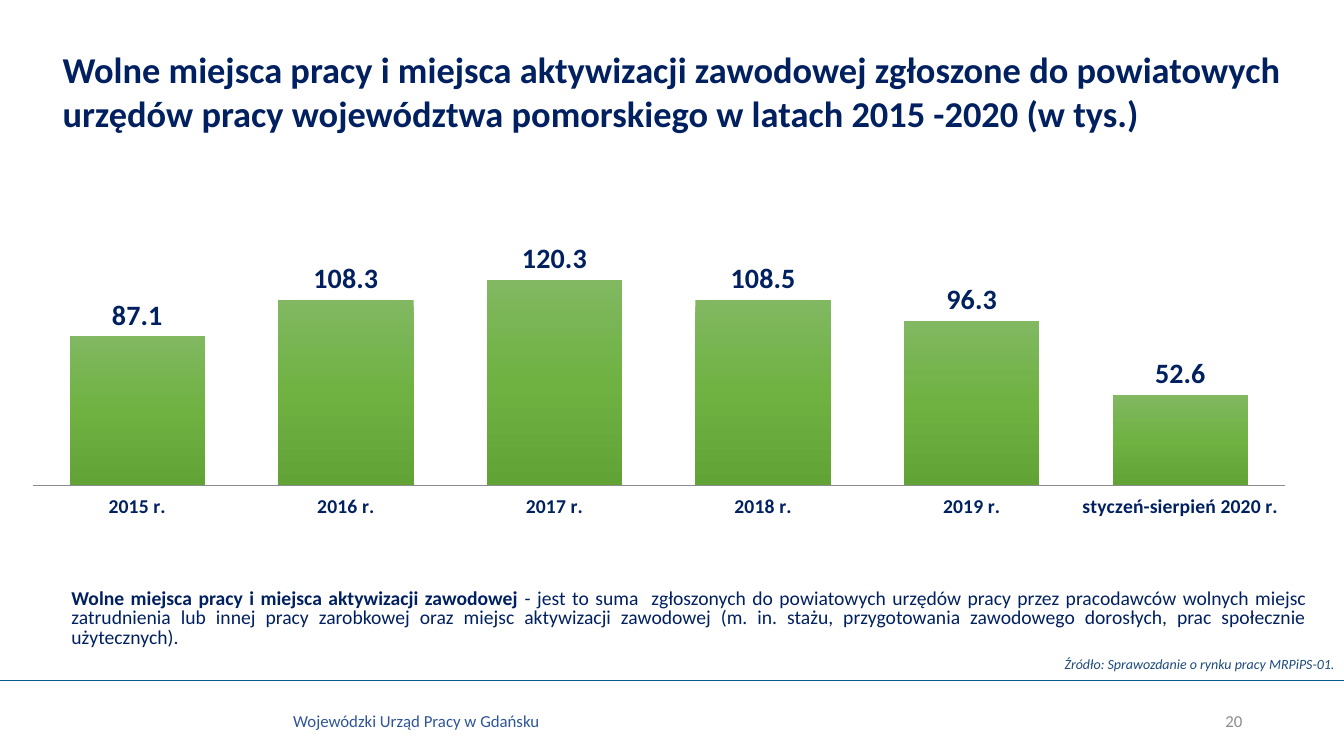
from lxml import etree
from pptx import Presentation
from pptx.chart.data import CategoryChartData
from pptx.dml.color import RGBColor
from pptx.enum.chart import XL_CHART_TYPE, XL_LABEL_POSITION, XL_TICK_LABEL_POSITION, XL_TICK_MARK
from pptx.enum.shapes import MSO_CONNECTOR
from pptx.enum.text import MSO_ANCHOR, MSO_AUTO_SIZE, PP_ALIGN
from pptx.oxml import parse_xml
from pptx.oxml.ns import nsdecls, qn
from pptx.util import Inches, Pt

NAVY, GREY = "002060", "8C8C8C"
BAR_GRADIENT = [(0, "81B861"), (50, "6FB242"), (100, "62A336")]
JOB_OFFERS = {
    "2015 r.": 87.1,
    "2016 r.": 108.3,
    "2017 r.": 120.3,
    "2018 r.": 108.5,
    "2019 r.": 96.3,
    "styczeń-sierpień 2020 r.": 52.6,
}


def rgb(value):
    return RGBColor.from_string(value)


class SlideBuilder:
    font_name = "Calibri"

    def __init__(self, slide):
        self.slide = slide

    def style(self, font, size, color, bold=False, italic=False):
        font.name = self.font_name
        font.size = Pt(size)
        font.color.rgb = rgb(color)
        font.bold = bold
        font.italic = italic

    def place(self, shape, left, top, width, height):
        shape.left, shape.top = Inches(left), Inches(top)
        shape.width, shape.height = Inches(width), Inches(height)

    def title(self, text, area, size, color):
        box = self.slide.shapes.title
        self.place(box, *area)
        frame = box.text_frame
        frame.text = text
        frame.word_wrap = True
        frame.auto_size = MSO_AUTO_SIZE.NONE
        frame.vertical_anchor = MSO_ANCHOR.TOP
        para = frame.paragraphs[0]
        para.alignment = PP_ALIGN.LEFT
        self.style(para.runs[0].font, size, color, bold=True)

    def text(self, spans, area, size, color, align=PP_ALIGN.LEFT, anchor=MSO_ANCHOR.TOP,
             italic=False, line_spacing=None, margin_right=0.1):
        """Add a text box from (text, bold) spans."""
        box = self.slide.shapes.add_textbox(*map(Inches, area))
        frame = box.text_frame
        frame.word_wrap = True
        frame.vertical_anchor = anchor
        frame.margin_right = Inches(margin_right)
        para = frame.paragraphs[0]
        para.alignment = align
        if line_spacing:
            para.line_spacing = Pt(line_spacing)
        for words, bold in spans:
            span = para.add_run()
            span.text = words
            self.style(span.font, size, color, bold, italic)

    def line(self, start, end, color, width):
        connector = self.slide.shapes.add_connector(
            MSO_CONNECTOR.STRAIGHT, *map(Inches, start + end))
        connector.line.color.rgb = rgb(color)
        connector.line.width = Pt(width)
        etree.SubElement(connector.element.spPr, qn("a:effectLst"))

    def column_chart(self, values, area, plot_area):
        data = CategoryChartData(number_format="0.0")
        data.categories = list(values)
        data.add_series("Wolne miejsca pracy", list(values.values()))
        chart = self.slide.shapes.add_chart(
            XL_CHART_TYPE.COLUMN_CLUSTERED, *map(Inches, area), data).chart
        chart.has_legend = False
        chart.has_title = False
        self.style(chart.font, 14, NAVY, bold=True)

        years = chart.category_axis
        years.major_tick_mark = XL_TICK_MARK.NONE
        years.tick_label_position = XL_TICK_LABEL_POSITION.LOW
        years.tick_labels.offset = 0
        years.format.line.color.rgb = rgb(GREY)
        years.format.line.width = Pt(0.5)
        self.style(years.tick_labels.font, 14, NAVY, bold=True)
        scale = chart.value_axis
        scale.minimum_scale, scale.maximum_scale, scale.major_unit = 0, 160, 40
        scale.has_major_gridlines = False
        scale.visible = False

        plot = chart.plots[0]
        plot.gap_width, plot.overlap = 54, -27
        plot.vary_by_categories = False
        plot.has_data_labels = True
        labels = plot.data_labels
        labels.show_value = True
        labels.number_format, labels.number_format_is_linked = "0.0", False
        labels.position = XL_LABEL_POSITION.OUTSIDE_END
        self.style(labels.font, 20, NAVY, bold=True)
        self.gradient(plot.series[0].format, BAR_GRADIENT)
        self.plot_layout(chart, plot_area)

    def gradient(self, bar_format, stops):
        """Fill bars from top to bottom through (percent, colour) stops."""
        bar_format.fill.gradient()
        bar_format.fill.gradient_angle = 270
        stop_list = bar_format.fill.gradient_stops
        parent = stop_list[0]._gs.getparent()
        for stop in list(parent):
            parent.remove(stop)
        for percent, color in stops:
            parent.append(parse_xml(
                f'<a:gs {nsdecls("a")} pos="{percent * 1000}"><a:srgbClr val="{color}"/></a:gs>'))

    def plot_layout(self, chart, plot_area):
        """Fix the inner plot area, given as fractions of the chart."""
        plot_element = chart._chartSpace.chart.plotArea
        for layout in plot_element.findall(qn("c:layout")):
            plot_element.remove(layout)
        layout = etree.Element(qn("c:layout"))
        manual = etree.SubElement(layout, qn("c:manualLayout"))
        settings = [("layoutTarget", "inner"), ("xMode", "edge"), ("yMode", "edge")]
        settings += zip("xywh", map(str, plot_area))
        for name, value in settings:
            etree.SubElement(manual, qn(f"c:{name}")).set("val", value)
        plot_element.insert(0, layout)


def main():
    deck = Presentation()
    deck.slide_width, deck.slide_height = Inches(13.33), Inches(7.5)
    page = SlideBuilder(deck.slides.add_slide(deck.slide_layouts[5]))

    page.line((0, 6.75), (13.33, 6.75), "065B8A", 1)
    page.text([("Wojewódzki Urząd Pracy w Gdańsku", False)],
              (2.81, 7, 3.56, 0.3), 12, "2F5597")
    page.column_chart(JOB_OFFERS, (0.2, 1.37, 12.72, 4.41), (0.01, 0.166, 0.976, 0.615))
    page.title("Wolne miejsca pracy i miejsca aktywizacji zawodowej zgłoszone do powiatowych "
               "urzędów pracy województwa pomorskiego w latach 2015 -2020 (w tys.)",
               (0.52, 0.42, 12.81, 0.98), 26, NAVY)
    page.text([("Źródło: Sprawozdanie o rynku pracy MRPiPS-01.", False)],
              (10.46, 6.45, 2.87, 0.27), 10, "1E4B7D", italic=True, margin_right=0)
    page.text([("20", False)], (9.42, 6.95, 3, 0.4), 12, GREY,
              align=PP_ALIGN.RIGHT, anchor=MSO_ANCHOR.MIDDLE)
    page.text([("Wolne miejsca pracy i miejsca aktywizacji zawodowej ", True),
               ("- jest to suma  zgłoszonych do powiatowych urzędów pracy przez pracodawców "
                "wolnych miejsc zatrudnienia lub innej pracy zarobkowej oraz miejsc aktywizacji "
                "zawodowej (m. in. stażu, przygotowania zawodowego dorosłych, prac społecznie "
                "użytecznych).", False)],
              (0.61, 5.8, 12.45, 0.69), 14, NAVY, align=PP_ALIGN.JUSTIFY, line_spacing=14)
    deck.save("out.pptx")


if __name__ == "__main__":
    main()
